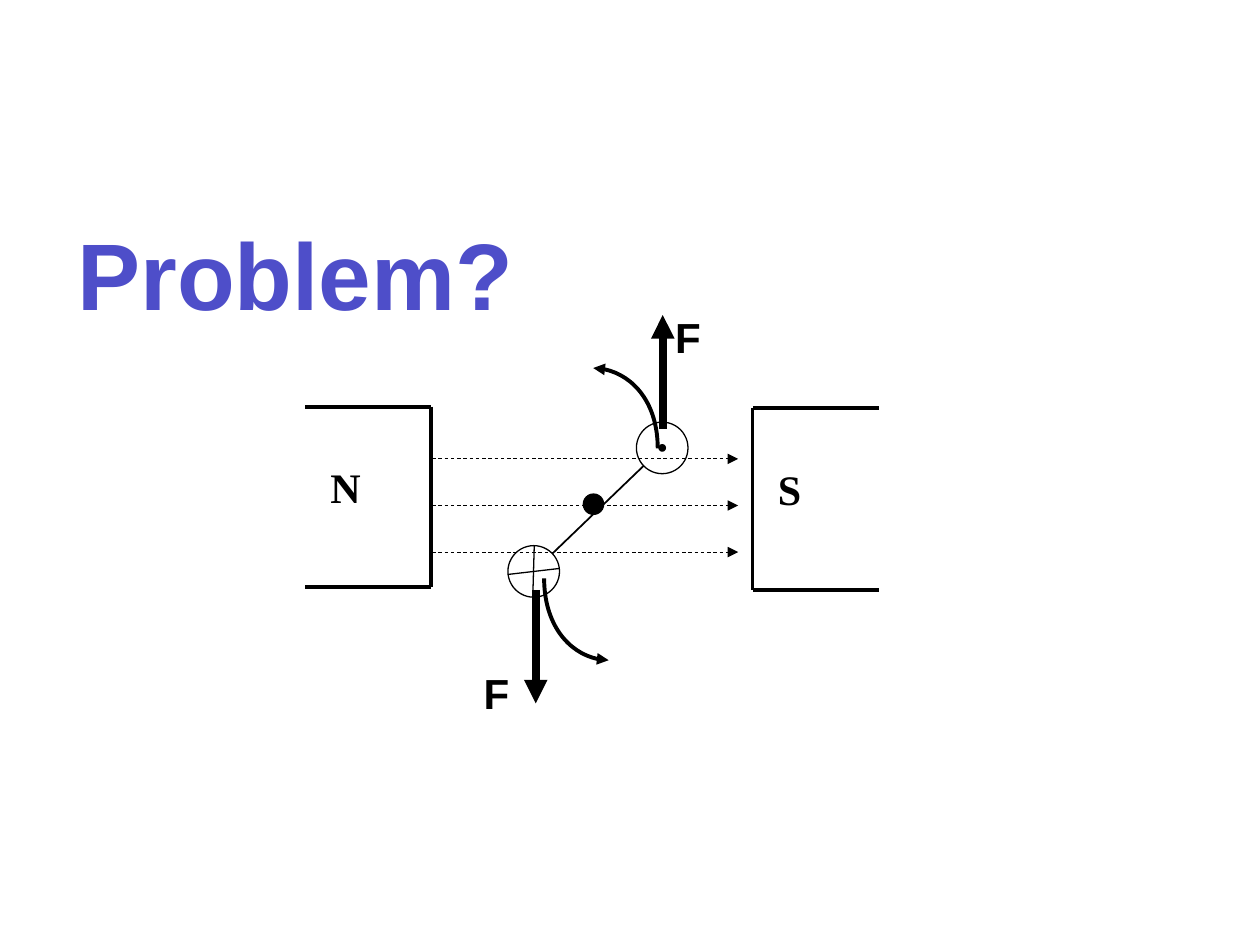
from dataclasses import dataclass

from pptx import Presentation
from pptx.dml.color import RGBColor
from pptx.enum.dml import MSO_LINE
from pptx.enum.shapes import MSO_CONNECTOR, MSO_SHAPE
from pptx.enum.text import PP_ALIGN
from pptx.oxml.ns import qn
from pptx.oxml.xmlchemy import OxmlElement
from pptx.util import Cm, Pt


@dataclass(frozen=True)
class Theme:
    """Colours, fonts, type sizes and line widths of the slide."""
    ink: RGBColor = RGBColor(0, 0, 0)
    paper: RGBColor = RGBColor(255, 255, 255)
    title: RGBColor = RGBColor(0x4E, 0x4E, 0xC9)
    sans: str = "Arial"
    serif: str = "Times New Roman"
    title_size: int = 54
    label_size: int = 24
    hairline: float = 0.5
    thin: float = 0.75
    wire: float = 1
    bold: float = 2.25
    force: float = 4.5


THEME = Theme()


@dataclass(frozen=True)
class Box:
    """A region of the slide, in centimetres."""
    left: float
    top: float
    width: float
    height: float

    @property
    def right(self):
        """Give the right edge."""
        return self.left + self.width

    @property
    def bottom(self):
        """Give the bottom edge."""
        return self.top + self.height

    @property
    def lengths(self):
        """Give the box as slide lengths."""
        return Cm(self.left), Cm(self.top), Cm(self.width), Cm(self.height)


def style_line(shape, width, arrow=False):
    """Ink the outline and optionally put an arrowhead at its end."""
    shape.line.color.rgb = THEME.ink
    shape.line.width = Pt(width)
    if arrow:
        tail = OxmlElement("a:tailEnd")
        tail.set("type", "triangle")
        shape.line._get_or_add_ln().append(tail)


def add_line(slide, start, end, width, arrow=False, dashed=False):
    """Draw a straight line between two points."""
    points = [Cm(value) for value in (*start, *end)]
    connector = slide.shapes.add_connector(MSO_CONNECTOR.STRAIGHT, *points)
    if dashed:
        connector.line.dash_style = MSO_LINE.DASH
    style_line(connector, width, arrow)
    connector._element.spPr.append(OxmlElement("a:effectLst"))


def add_disc(slide, center, diameter, color):
    """Draw a filled circle around a point."""
    x, y = center
    box = Box(x - diameter / 2, y - diameter / 2, diameter, diameter)
    disc = slide.shapes.add_shape(MSO_SHAPE.OVAL, *box.lengths)
    disc.shadow.inherit = False
    disc.fill.solid()
    disc.fill.fore_color.rgb = color
    style_line(disc, THEME.thin)


def add_text(slide, box, text, font, size, color, wrap=True, align=PP_ALIGN.LEFT):
    """Place one bold line of text."""
    frame = slide.shapes.add_textbox(*box.lengths).text_frame
    frame.word_wrap = wrap
    paragraph = frame.paragraphs[0]
    paragraph.alignment = align
    run = paragraph.add_run()
    run.text = text
    run.font.name = font
    run.font.size = Pt(size)
    run.font.bold = True
    run.font.color.rgb = color


def add_title(slide, box):
    """Place the slide title."""
    add_text(slide, box, "Problem?", THEME.sans, THEME.title_size,
             THEME.title, wrap=False, align=PP_ALIGN.CENTER)


def add_magnet(slide, box, name, face, back):
    """Draw a magnet open at its back, with its pole name."""
    for y in (box.top, box.bottom):
        add_line(slide, (back, y), (face, y), THEME.bold)
    add_line(slide, (face, box.top), (face, box.bottom), THEME.bold)
    label = Box(box.left + 0.26, box.top + 0.98, 2.57, 2.08)
    add_text(slide, label, name, THEME.serif, THEME.label_size, THEME.ink)


def add_coil(slide, box, diameter):
    """Draw the axle and the coil with current out above and in below."""
    radius = diameter / 2
    upper = (box.right - radius, box.top + radius)
    lower = (box.left + radius, box.bottom - radius)
    axle = (box.left + box.width / 2 - 0.09, box.top + box.height / 2 - 0.11)
    add_disc(slide, axle, 0.41, THEME.ink)
    add_line(slide, upper, lower, THEME.wire)
    for center in (upper, lower):
        add_disc(slide, center, diameter, THEME.paper)
    x, y = lower
    add_line(slide, (x - 0.02, y + radius), (x + 0.01, y - radius), THEME.thin)
    add_line(slide, (x + radius, y - 0.06), (x - radius, y + 0.06), THEME.thin)
    add_disc(slide, upper, 0.13, THEME.ink)


def add_field(slide, box, count):
    """Draw evenly spaced field lines from north to south."""
    for index in range(count):
        y = box.top + index * box.height / (count - 1)
        add_line(slide, (box.left, y), (box.right, y), THEME.hairline,
                 arrow=True, dashed=True)


def add_force(slide, start, end, label):
    """Draw a force arrow and its letter."""
    add_line(slide, start, end, THEME.force, arrow=True)
    add_text(slide, label, "F", THEME.sans, THEME.label_size, THEME.ink)


def add_turn(slide, start, tip):
    """Draw a quarter-turn arrow that leaves vertically and ends level."""
    (x, y), (tip_x, tip_y) = start, tip
    points = [(x, y + 0.55 * (tip_y - y)), (x + 0.45 * (tip_x - x), tip_y), tip]
    builder = slide.shapes.build_freeform(Cm(x), Cm(y))
    builder.add_line_segments([(Cm(a), Cm(b)) for a, b in points], close=False)
    turn = builder.convert_to_shape()
    turn.shadow.inherit = False
    turn.fill.background()
    style_line(turn, THEME.bold, arrow=True)
    outline = next(turn._element.iter(qn("a:path")))
    curve = OxmlElement("a:cubicBezTo")
    for segment in outline.findall(qn("a:lnTo")):
        curve.append(segment[0])
        outline.remove(segment)
    outline.append(curve)


def main():
    """Build and save the slide."""
    presentation = Presentation()
    presentation.slide_width, presentation.slide_height = Cm(25.4), Cm(19.05)
    slide = presentation.slides.add_slide(presentation.slide_layouts[6])
    north = Box(6.15, 8.2, 2.54, 3.64)
    south = Box(15.17, 8.23, 2.54, 3.66)
    add_magnet(slide, north, "N", face=north.right, back=north.left)
    add_magnet(slide, south, "S", face=south.left, back=south.right)
    add_coil(slide, Box(10.24, 8.51, 3.63, 3.53), 1.04)
    add_field(slide, Box(8.71, 9.25, 6.17, 1.88), 3)
    add_force(slide, (13.36, 8.64), (13.36, 6.35), Box(13.36, 6.15, 1.3, 0.84))
    add_force(slide, (10.8, 11.89), (10.8, 14.18), Box(9.5, 13.34, 1.3, 0.84))
    add_turn(slide, (10.97, 11.66), (12.27, 13.31))
    add_turn(slide, (13.26, 9.04), (11.96, 7.42))
    add_title(slide, Box(1.27, 4.24, 9.37, 2.57))
    presentation.save("out.pptx")


if __name__ == "__main__":
    main()
